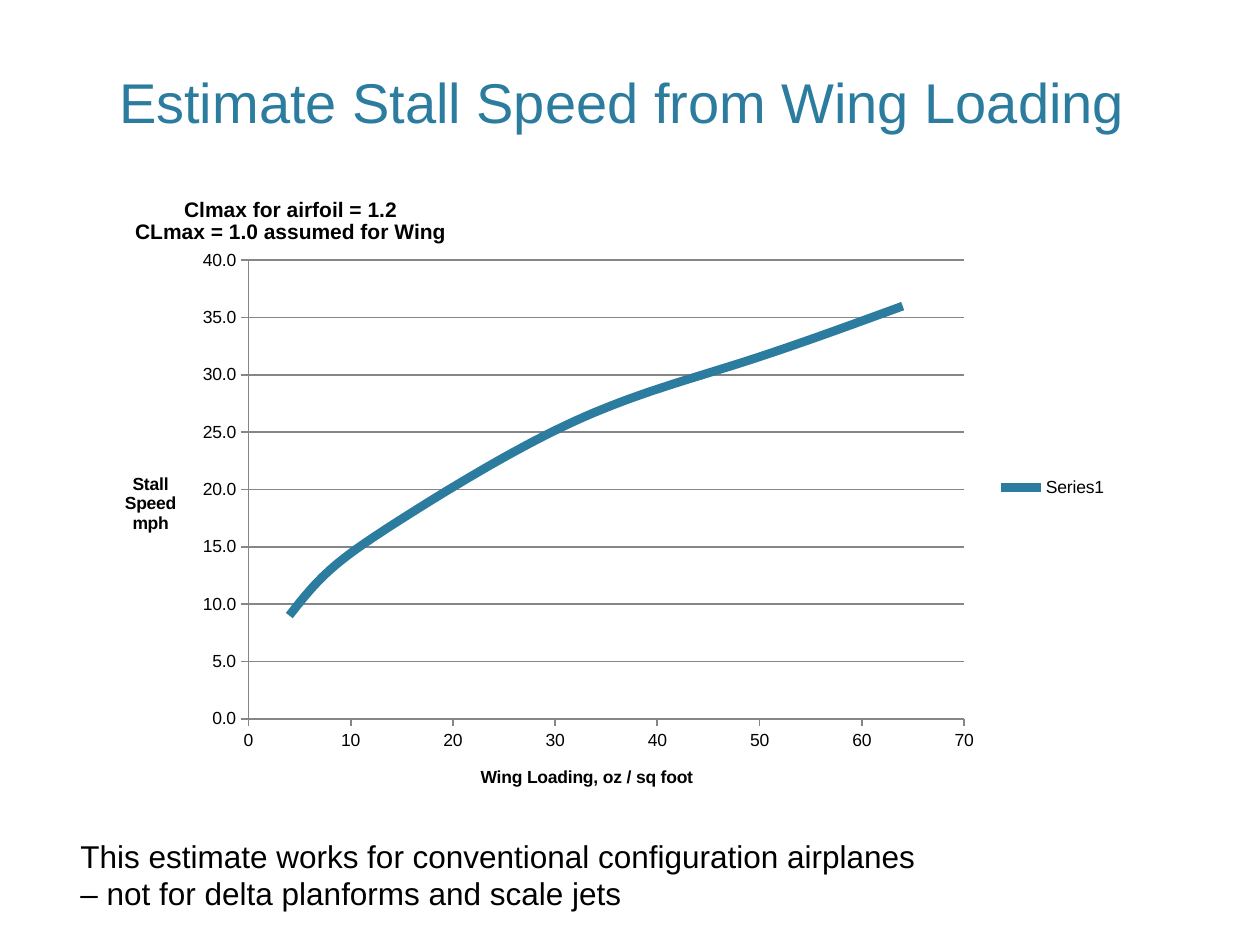
from dataclasses import dataclass

import lxml.etree
import pptx
import pptx.chart.data
import pptx.dml.color
import pptx.enum.chart
import pptx.enum.text
import pptx.oxml.ns
import pptx.util

Inches, Pt = pptx.util.Inches, pptx.util.Pt
qn = pptx.oxml.ns.qn

COLORS = {"accent": "2C7C9F", "text": "000000", "rule": "868686"}
FONT = "Arial"
LEFT = pptx.enum.text.PP_ALIGN.LEFT
CENTER = pptx.enum.text.PP_ALIGN.CENTER
TOP = pptx.enum.text.MSO_ANCHOR.TOP
BOTTOM = pptx.enum.text.MSO_ANCHOR.BOTTOM

# Wing loading (oz / sq foot) and stall speed (mph)
STALL_SPEEDS = {4: 9, 8: 13, 16: 18, 32: 26, 48: 31, 64: 36}


@dataclass
class Caption:
    lines: list[str]
    box: tuple[float, float, float, float]
    size: int
    color: str
    align: pptx.enum.text.PP_ALIGN
    anchor: pptx.enum.text.MSO_ANCHOR
    wrap: bool


CAPTIONS = [
    Caption(["Estimate Stall Speed from Wing Loading"],
            (0.54, 0.29, 8.8, 0.83), 32, "accent", CENTER, BOTTOM, True),
    Caption(["This estimate works for conventional configuration airplanes",
             "– not for delta planforms and scale jets"],
            (0.54, 6.59, 6.89, 0.71), 18, "text", LEFT, TOP, False),
]


def rgb(name: str) -> pptx.dml.color.RGBColor:
    return pptx.dml.color.RGBColor.from_string(COLORS[name])


def style_font(font, size: int, color: str = "text", bold: bool = False) -> None:
    font.name, font.size, font.bold = FONT, Pt(size), bold
    font.color.rgb = rgb(color)


def style_line(line, color: str, width: float) -> None:
    line.color.rgb = rgb(color)
    line.width = Pt(width)


def add_caption(slide, caption: Caption) -> None:
    frame = slide.shapes.add_textbox(*map(Inches, caption.box)).text_frame
    frame.word_wrap = caption.wrap
    if not caption.wrap:
        frame.auto_size = pptx.enum.text.MSO_AUTO_SIZE.SHAPE_TO_FIT_TEXT
    frame.vertical_anchor = caption.anchor
    paragraph = frame.paragraphs[0]
    paragraph.alignment = caption.align
    for index, line in enumerate(caption.lines):
        if index:
            paragraph.add_line_break()
        run = paragraph.add_run()
        run.text = line
        style_font(run.font, caption.size, caption.color)


def place(element, **fractions: float) -> None:
    """Set a manual layout, in fractions of the chart area."""
    for old in element.findall(qn("c:layout")):
        element.remove(old)
    layout = lxml.etree.Element(qn("c:layout"))
    manual = lxml.etree.SubElement(layout, qn("c:manualLayout"))
    settings = {"xMode": "edge", "yMode": "edge", **fractions}
    if element.tag == qn("c:plotArea"):
        settings = {"layoutTarget": "inner", **settings}
    for tag, value in settings.items():
        lxml.etree.SubElement(manual, qn(f"c:{tag}")).set("val", str(value))
    overlay = element.find(qn("c:overlay"))
    if overlay is None:
        element.insert(0, layout)
    else:
        overlay.addprevious(layout)


def write_title(frame, lines: list[str], size: int) -> None:
    for index, line in enumerate(lines):
        paragraph = frame.add_paragraph() if index else frame.paragraphs[0]
        paragraph.alignment = CENTER
        run = paragraph.add_run()
        run.text = line
        style_font(run.font, size, bold=True)


def format_axis(axis, title: list[str], maximum: int, step: int,
                number_format: str, x: float, y: float) -> None:
    axis.minimum_scale, axis.maximum_scale, axis.major_unit = 0, maximum, step
    axis.major_tick_mark = pptx.enum.chart.XL_TICK_MARK.OUTSIDE
    axis.minor_tick_mark = pptx.enum.chart.XL_TICK_MARK.NONE
    axis.tick_labels.number_format = number_format
    axis.tick_labels.number_format_is_linked = False
    style_font(axis.tick_labels.font, 10)
    style_line(axis.format.line, "rule", 1)
    frame = axis.axis_title.text_frame
    write_title(frame, title, 10)
    body = axis.axis_title._element.find(f".//{qn('a:bodyPr')}")
    body.set("rot", "0")
    body.set("vert", "horz")
    place(axis.axis_title._element, x=x, y=y)


def add_stall_chart(slide) -> None:
    data = pptx.chart.data.XyChartData()
    stall_speed = data.add_series("Series1", number_format="0.0")
    for loading, speed in STALL_SPEEDS.items():
        stall_speed.add_data_point(loading, speed)
    chart = slide.shapes.add_chart(
        pptx.enum.chart.XL_CHART_TYPE.XY_SCATTER_SMOOTH_NO_MARKERS,
        *map(Inches, (0.8, 1.27, 8.08, 5.2)), data).chart
    style_font(chart.font, 10)

    # Curve; the smooth flag is spelled out because its default varies by reader
    plot = chart.plots[0]
    plot.vary_by_categories = False
    curve = plot.series[0]
    curve.marker.style = pptx.enum.chart.XL_MARKER_STYLE.NONE
    style_line(curve.format.line, "accent", 5)
    smooth = curve._element.find(qn("c:smooth"))
    if smooth is None:
        smooth = lxml.etree.SubElement(curve._element, qn("c:smooth"))
    smooth.set("val", "1")

    # Axes and grid
    format_axis(chart.category_axis, ["Wing Loading, oz / sq foot"],
                70, 10, "0", 0.37, 0.92)
    format_axis(chart.value_axis, ["Stall", "Speed", "mph"],
                40, 5, "0.0", 0.02, 0.47)
    chart.category_axis.has_major_gridlines = False
    chart.value_axis.has_major_gridlines = True
    style_line(chart.value_axis.major_gridlines.format.line, "rule", 1)
    place(plot._element.getparent(), x=0.145, y=0.153, w=0.703, h=0.7)

    # Chart title and legend
    chart.has_title = True
    write_title(chart.chart_title.text_frame,
                ["Clmax for airfoil = 1.2", "CLmax = 1.0 assumed for Wing"], 12)
    place(chart.chart_title._element, x=0.03, y=0.05)
    chart.has_legend = True
    chart.legend.position = pptx.enum.chart.XL_LEGEND_POSITION.RIGHT
    chart.legend.include_in_layout = False
    style_font(chart.legend.font, 10)
    place(chart.legend._element, x=0.88, y=0.48, w=0.11, h=0.04)


def main() -> None:
    deck = pptx.Presentation()
    deck.slide_width, deck.slide_height = Inches(10), Inches(7.5)
    slide = deck.slides.add_slide(deck.slide_layouts[6])
    heading, note = CAPTIONS
    add_caption(slide, heading)
    add_stall_chart(slide)
    add_caption(slide, note)
    deck.save("out.pptx")


if __name__ == "__main__":
    main()
